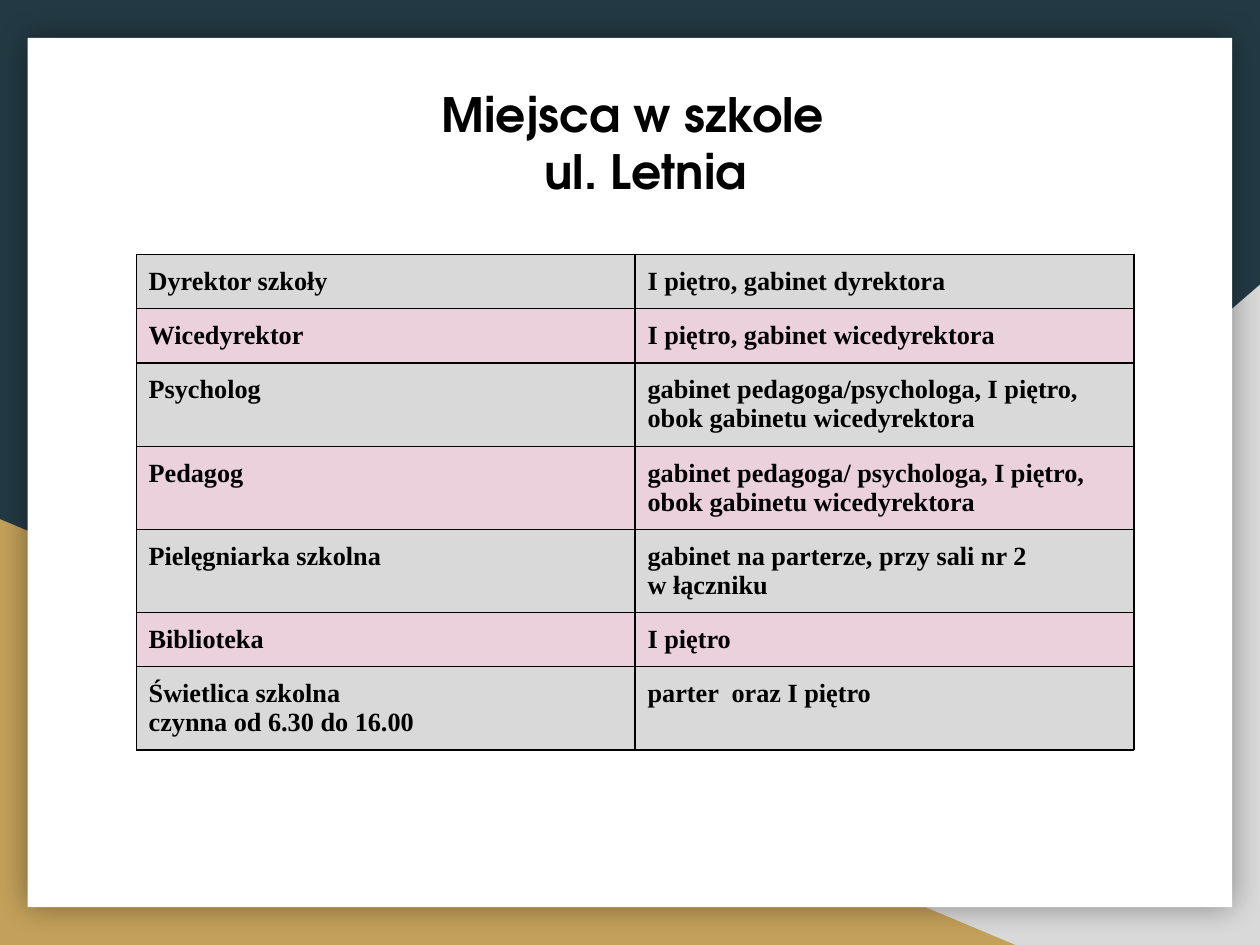
from lxml.etree import SubElement as Sub
from pptx import Presentation
from pptx.dml.color import RGBColor as Rgb
from pptx.enum.shapes import MSO_SHAPE as Kind
from pptx.enum.text import MSO_ANCHOR as Anchor, PP_ALIGN as Align
from pptx.oxml import parse_xml
from pptx.oxml.ns import nsdecls, qn
from pptx.util import Inches, Pt

COLORS = {
    "navy": "233A44", "gray": "D9D9D9", "gold": "C4A15A",
    "white": "FFFFFF", "pink": "EAD1DC", "black": "000000",
}


def paint(fill, name):
    fill.solid()
    fill.fore_color.rgb = Rgb.from_string(COLORS[name])


def style(frame, font, size):
    frame.word_wrap = True
    frame.vertical_anchor = Anchor.TOP
    for para in frame.paragraphs:
        for run in para.runs:
            run.font.name = font
            run.font.size = Pt(size)
            run.font.bold = True
            run.font.color.rgb = Rgb.from_string(COLORS["black"])


prs = Presentation()
prs.slide_width, prs.slide_height = Inches(10), Inches(7.5)
slide = prs.slides.add_slide(prs.slide_layouts[5])
paint(slide.background.fill, "navy")

backs = [
    (Kind.RIGHT_TRIANGLE, 3.92, 2.26, 6.08, 5.24, "gray"),
    (Kind.RIGHT_TRIANGLE, 0, 4.12, 8.06, 3.38, "gold"),
    (Kind.RECTANGLE, 0.22, 0.3, 9.56, 6.9, "white"),
]
shapes = []
for kind, *box, color in backs:
    shape = slide.shapes.add_shape(kind, *map(Inches, box))
    paint(shape.fill, color)
    shape.line.fill.background()
    shape.shadow.inherit = False
    shapes.append(shape)

right, left, card = shapes
right._element.spPr.find(qn("a:xfrm")).set("flipH", "1")
glow = card._element.spPr.find(qn("a:effectLst"))
glow.append(parse_xml(
    f'<a:outerShdw {nsdecls("a")} blurRad="{Pt(18)}" dist="0" dir="0" algn="ctr" rotWithShape="0">'
    f'<a:srgbClr val="{COLORS["black"]}"><a:alpha val="40000"/></a:srgbClr></a:outerShdw>'))

title = slide.shapes.title
slide.shapes._spTree.append(title._element)
title.left, title.top = Inches(0.92), Inches(0.58)
title.width, title.height = Inches(8.21), Inches(0.92)
frame = title.text_frame
frame.text = "Miejsca w szkole\nul. Letnia"
frame.margin_left = frame.margin_right = Inches(0.1)
frame.margin_top = frame.margin_bottom = Inches(0.1)
style(frame, "TeX Gyre Adventor", 27)
for para in frame.paragraphs:
    para.alignment = Align.CENTER
para._p.get_or_add_pPr().set("marL", str(Inches(0.2)))

places = [
    ("Dyrektor szkoły", "I piętro, gabinet dyrektora", 0.43),
    ("Wicedyrektor", "I piętro, gabinet wicedyrektora", 0.43),
    ("Psycholog", "gabinet pedagoga/psychologa, I piętro, obok gabinetu wicedyrektora", 0.66),
    ("Pedagog", "gabinet pedagoga/ psychologa, I piętro, obok gabinetu wicedyrektora", 0.66),
    ("Pielęgniarka szkolna", "gabinet na parterze, przy sali nr 2\vw łączniku", 0.66),
    ("Biblioteka", "I piętro", 0.43),
    ("Świetlica szkolna\nczynna od 6.30 do 16.00", "parter  oraz I piętro", 0.66),
]
high = sum(height for *_, height in places)
grid = slide.shapes.add_table(
    len(places), 2, Inches(1.08), Inches(2.02), Inches(7.92), Inches(high)).table
for i, (*texts, height) in enumerate(places):
    grid.rows[i].height = Inches(height)
    for j, text in enumerate(texts):
        cell = grid.cell(i, j)
        cell.text_frame.text = text
        cell.margin_left = cell.margin_right = Inches(0.1)
        cell.margin_top = cell.margin_bottom = Inches(0.1)
        style(cell.text_frame, "Times New Roman", 15)
        props = cell._tc.get_or_add_tcPr()
        for side in ("lnL", "lnR", "lnT", "lnB"):
            edge = Sub(props, qn(f"a:{side}"), w=str(Pt(0.75)))
            solid = Sub(edge, qn("a:solidFill"))
            Sub(solid, qn("a:srgbClr"), val=COLORS["black"])
        paint(cell.fill, "pink" if i % 2 else "gray")

prs.save("out.pptx")
